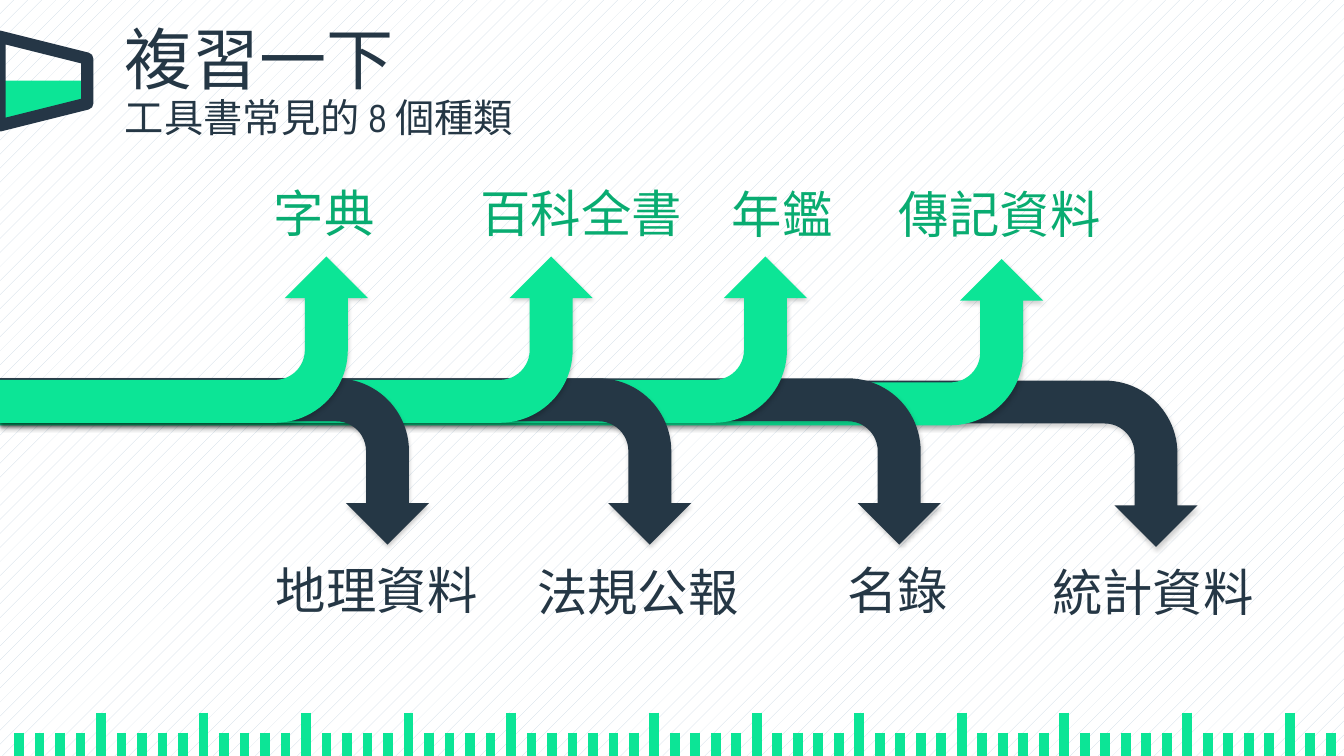
"""Review slide: eight kinds of reference books on branching arrows."""
from lxml import etree
from pptx import Presentation
from pptx.dml.color import RGBColor
from pptx.enum.dml import MSO_PATTERN
from pptx.enum.shapes import MSO_CONNECTOR, MSO_SHAPE as SHAPE
from pptx.enum.text import MSO_ANCHOR as ANCHOR, MSO_AUTO_SIZE as FIT, PP_ALIGN
from pptx.oxml import parse_xml
from pptx.oxml.ns import nsdecls, qn
from pptx.util import Pt

C = {"green": "0CE596", "deep": "09AC71", "dark": "253745",
     "flask": "253646", "dots": "CAD8E3", "white": "FFFFFF"}
RGB = {name: RGBColor.from_string(value) for name, value in C.items()}
SHADOW = (f'<a:effectLst {nsdecls("a")}><a:outerShdw blurRad="{Pt(3.1)}" dist="{Pt(1.8)}" '
          'dir="5400000" rotWithShape="0"><a:srgbClr val="000000"><a:alpha val="20000"/>'
          '</a:srgbClr></a:outerShdw></a:effectLst>')


def add_text(p, text, size=36, color="dark"):
    """Append a formatted run to a paragraph."""
    r = p.add_run()
    r.text = text
    r.font.name = "Arial Narrow"
    r.font.size = Pt(size)
    r.font.color.rgb = RGB[color]


prs = Presentation()
prs.slide_width, prs.slide_height = Pt(960), Pt(540)
s = prs.slides.add_slide(prs.slide_layouts[5])
bg = s.background.fill
bg.patterned()
bg.pattern = MSO_PATTERN.PERCENT_5
bg.fore_color.rgb, bg.back_color.rgb = RGB["dots"], RGB["white"]

fb = s.shapes.build_freeform(Pt(3.6), Pt(57.6))
fb.add_line_segments([(Pt(x), Pt(y)) for x, y in ((66.2, 57.6), (66.2, 74.2), (3.6, 90))])
liquid = fb.convert_to_shape()
liquid.shadow.inherit = False
liquid.fill.solid()
liquid.fill.fore_color.rgb = RGB["green"]
liquid.line.fill.background()

flask = s.shapes.add_shape(SHAPE.TRAPEZOID, Pt(-0.7), Pt(26.6), Pt(63.4), Pt(62.6))
flask.rotation = 90
flask.shadow.inherit = False
flask.fill.background()
flask.line.color.rgb = RGB["flask"]
flask.line.width = Pt(8.75)

tall_ticks = {*range(4, 25, 5), *range(31, 52, 5), 57, 62}
for i in range(65):
    x = Pt(13.6 + 14.64 * i)
    top = Pt(509 if i in tall_ticks else 523.4)
    tick = s.shapes.add_connector(MSO_CONNECTOR.STRAIGHT, x, top, x, Pt(540))
    tick.line.color.rgb = RGB["green"]
    tick.line.width = Pt(7)
    etree.SubElement(tick._element.spPr, qn("a:effectLst"))

title = s.shapes.title
title.left, title.top, title.width, title.height = Pt(82), Pt(15), Pt(294.5), Pt(90.7)
tf = title.text_frame
tf.word_wrap = True
tf.auto_size = FIT.NONE
tf.vertical_anchor = ANCHOR.TOP
p = tf.paragraphs[0]
p.alignment = PP_ALIGN.LEFT
p.line_spacing = 0.9
p.space_before = Pt(10)
add_text(p, "複習一下", 48)
p.add_line_break()
add_text(p, "工具書常見的 8 個種類", 28)

arrows = [
    ("dark", 855.4, 331.2), ("green", 745.2, 244.4),
    ("dark", 672, 329.6), ("green", 576.5, 242.6),
    ("dark", 493.9, 329.6), ("green", 423.4, 242.6),
    ("dark", 306.5, 329.6), ("green", 262.8, 242.6),
]
depth = 118.8
for color, reach, mid_y in arrows:
    arrow = s.shapes.add_shape(SHAPE.BENT_ARROW, Pt((reach - depth) / 2), Pt(mid_y - reach / 2),
                               Pt(depth), Pt(reach))
    for i, value in enumerate((0.258, 0.25, 0.25, 0.438)):
        arrow.adjustments[i] = value
    arrow.rotation = 90 if color == "green" else 270
    xfrm = arrow._element.spPr.find(qn("a:xfrm"))
    xfrm.set("flipH", "1")
    if color == "dark":
        xfrm.set("flipV", "1")
    arrow.fill.solid()
    arrow.fill.fore_color.rgb = RGB[color]
    arrow.line.fill.background()
    arrow._element.spPr.append(parse_xml(SHADOW))

labels = [
    ("字典", 188.6, 126, "deep"), ("百科全書", 336.2, 126, "deep"),
    ("年鑑", 515.5, 126.7, "deep"), ("傳記資料", 635, 126.7, "deep"),
    ("地理資料", 190, 395.3, "dark"), ("法規公報", 376.6, 396.7, "dark"),
    ("名錄", 598.3, 395.3, "dark"), ("統計資料", 744.5, 396.7, "dark"),
]
for text, x, y, color in labels:
    box = s.shapes.add_textbox(Pt(x), Pt(y), Pt(15 + 36 * len(text)), Pt(51))
    tf = box.text_frame
    tf.word_wrap = False
    tf.auto_size = FIT.SHAPE_TO_FIT_TEXT
    tf.vertical_anchor = ANCHOR.MIDDLE
    add_text(tf.paragraphs[0], text, color=color)

prs.save("out.pptx")
